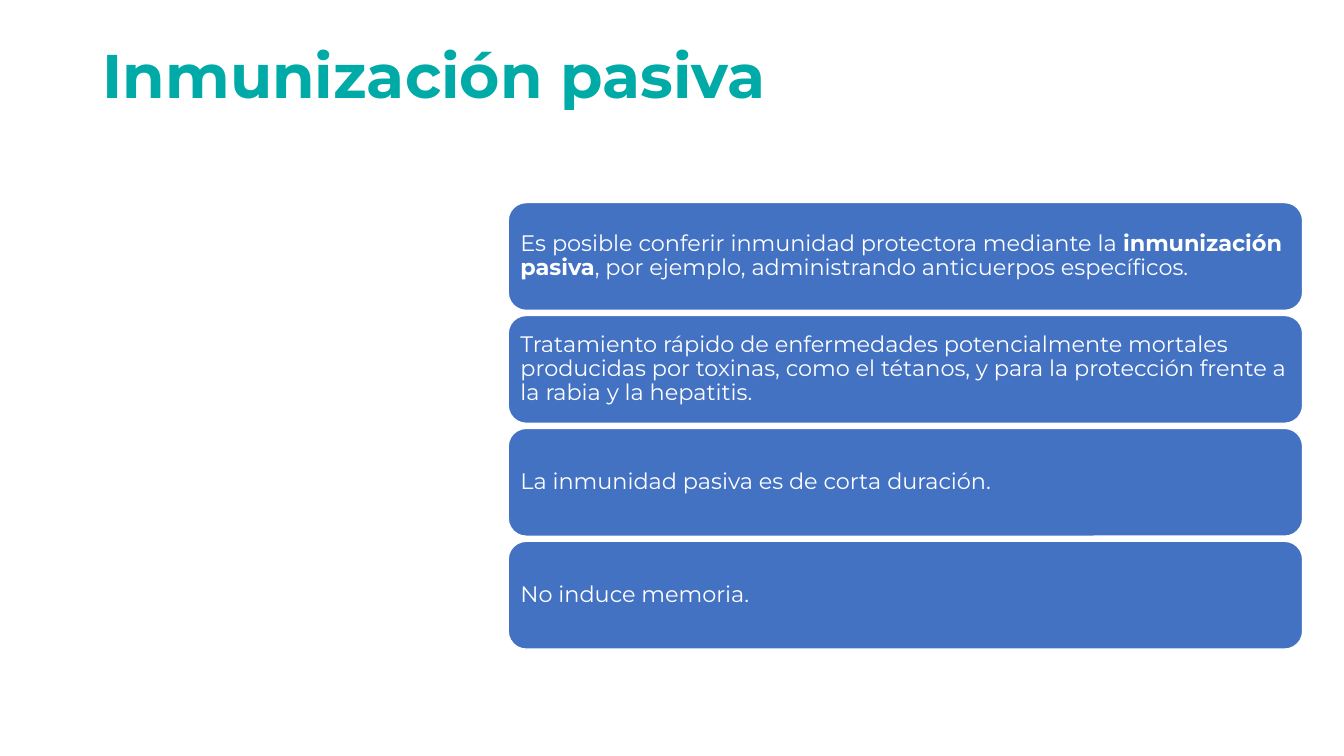
from dataclasses import dataclass

from pptx import Presentation
from pptx import util as u
from pptx.dml.color import RGBColor
from pptx.enum import shapes, text

TEAL = RGBColor(0x00, 0xAA, 0xA7)
BLUE = RGBColor(0x43, 0x72, 0xC3)
WHITE = RGBColor(0xFF, 0xFF, 0xFF)
FONT = "Montserrat"

CARD_LEFT, CARD_TOP = 5.04, 2.01
CARD_WIDTH, CARD_HEIGHT = 7.88, 1.07
CARD_PITCH = 1.12


@dataclass(frozen=True)
class Run:
    text: str
    bold: bool = False


CARDS: list[list[Run]] = [
    [
        Run("Es posible conferir inmunidad protectora mediante la "),
        Run("inmunización pasiva", bold=True),
        Run(", por ejemplo, administrando anticuerpos específicos."),
    ],
    [Run("Tratamiento rápido de enfermedades potencialmente mortales producidas "
         "por toxinas, como el tétanos, y para la protección frente a la rabia "
         "y la hepatitis.")],
    [Run("La inmunidad pasiva es de corta duración.")],
    [Run("No induce memoria.")],
]


def set_attributes(target, values: dict) -> None:
    for name, value in values.items():
        setattr(target, name, value)


def write_text(shape, runs: list[Run], size: float, color: RGBColor,
               frame_format: dict) -> None:
    frame = shape.text_frame
    set_attributes(frame, {"word_wrap": True, **frame_format})
    paragraph = frame.paragraphs[0]
    set_attributes(paragraph, {"alignment": text.PP_ALIGN.LEFT, "line_spacing": 0.9})
    for item in runs:
        run = paragraph.add_run()
        run.text = item.text
        set_attributes(run.font, {"name": FONT, "size": u.Pt(size), "bold": item.bold})
        run.font.color.rgb = color


def add_title(slide) -> None:
    title = slide.shapes.add_textbox(
        u.Inches(0.92), u.Inches(0.4), u.Inches(11.5), u.Inches(1.45))
    write_text(title, [Run("Inmunización pasiva", bold=True)], 44, TEAL,
               {"vertical_anchor": text.MSO_ANCHOR.TOP})


def add_card(slide, index: int, runs: list[Run]) -> None:
    card = slide.shapes.add_shape(
        shapes.MSO_SHAPE.ROUNDED_RECTANGLE,
        u.Inches(CARD_LEFT), u.Inches(CARD_TOP + index * CARD_PITCH),
        u.Inches(CARD_WIDTH), u.Inches(CARD_HEIGHT))
    card.shadow.inherit = False
    card.fill.solid()
    card.fill.fore_color.rgb = BLUE
    card.line.color.rgb = WHITE
    card.line.width = u.Pt(1)
    sides = ("left", "top", "right", "bottom")
    margins = {f"margin_{side}": u.Inches(0.07) for side in sides}
    write_text(card, runs, 16, WHITE,
               {"vertical_anchor": text.MSO_ANCHOR.MIDDLE, **margins})


def main() -> None:
    presentation = Presentation()
    presentation.slide_width = u.Inches(13.33)
    presentation.slide_height = u.Inches(7.5)
    slide = presentation.slides.add_slide(presentation.slide_layouts[6])
    add_title(slide)
    for index, runs in enumerate(CARDS):
        add_card(slide, index, runs)
    presentation.save("out.pptx")


if __name__ == "__main__":
    main()
